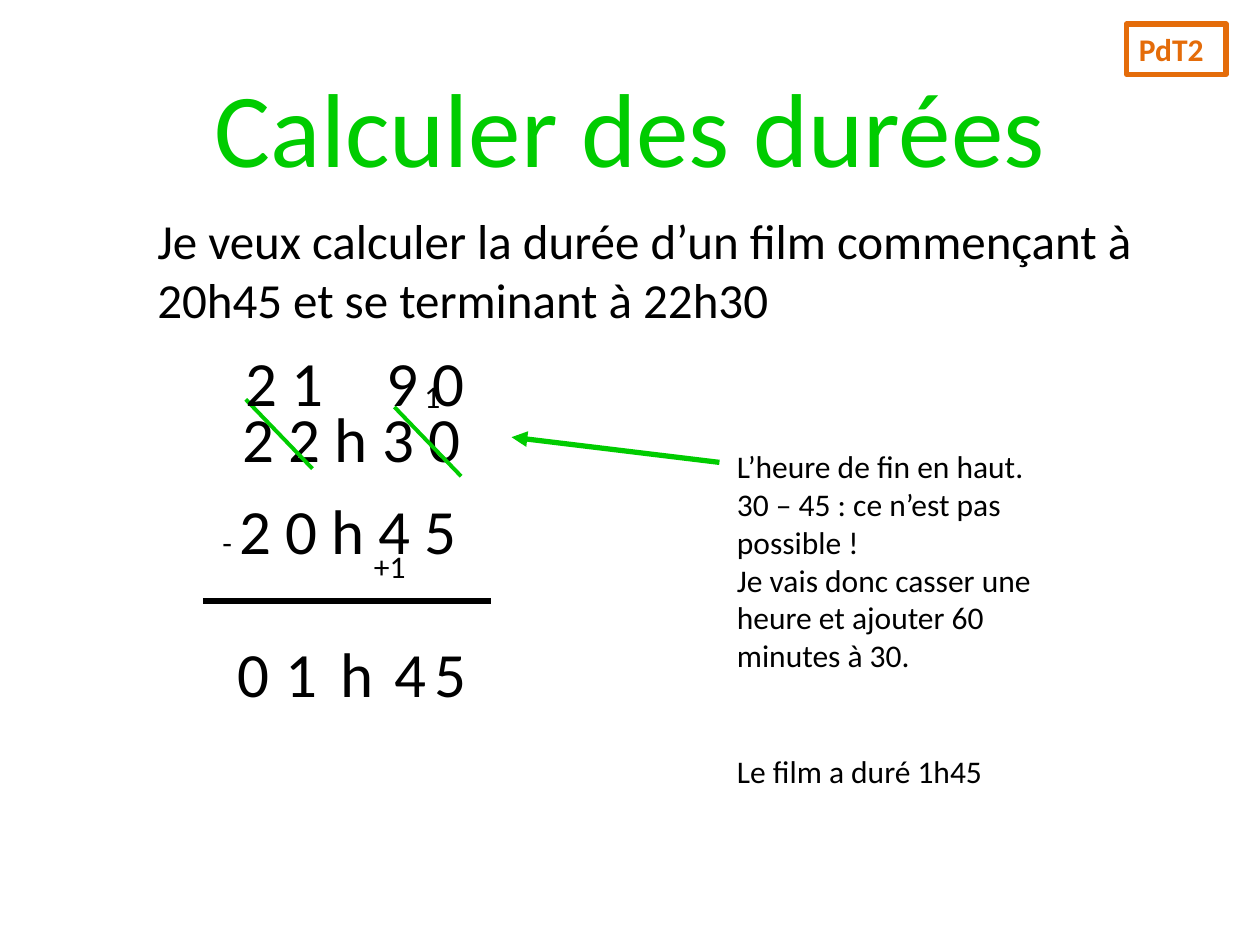
from dataclasses import dataclass

from lxml.etree import SubElement
from pptx import Presentation
from pptx.dml.color import RGBColor
from pptx.enum.shapes import MSO_CONNECTOR, MSO_SHAPE
from pptx.enum.text import MSO_ANCHOR, PP_ALIGN
from pptx.oxml.ns import qn
from pptx.util import Inches, Pt


@dataclass(frozen=True)
class Theme:
    font: str = "Calibri"
    ink: str = "000000"
    green: str = "00CC00"
    orange: str = "E46C0A"
    title: int = 60
    statement: int = 28
    digit: int = 36
    note: int = 18
    thick: float = 3
    thin: float = 2.25


class SlideBuilder:
    COLUMNS = 100
    ROWS = 75

    def __init__(self, presentation, theme):
        self.theme = theme
        self.column = presentation.slide_width / self.COLUMNS
        self.row = presentation.slide_height / self.ROWS
        self.slide = presentation.slides.add_slide(presentation.slide_layouts[6])

    def place(self, *lengths):
        units = (self.column, self.row) * 2
        return [round(length * unit) for length, unit in zip(lengths, units)]

    def format_run(self, run, size, color, bold=False):
        run.font.name = self.theme.font
        run.font.size = Pt(size)
        run.font.bold = bold
        run.font.color.rgb = RGBColor.from_string(color)

    def set_text(self, shape, text, size, color, bold=False):
        text_frame = shape.text_frame
        text_frame.word_wrap = True
        text_frame.text = text
        for paragraph in text_frame.paragraphs:
            paragraph.alignment = PP_ALIGN.LEFT
            for run in paragraph.runs:
                self.format_run(run, size, color, bold)
        return text_frame

    def text(self, text, area, size, color=None):
        shape = self.slide.shapes.add_textbox(*self.place(*area))
        return self.set_text(shape, text, size, color or self.theme.ink)

    def title(self, text, area):
        text_frame = self.text(text, area, self.theme.title, self.theme.green)
        text_frame.vertical_anchor = MSO_ANCHOR.MIDDLE
        text_frame.paragraphs[0].alignment = PP_ALIGN.CENTER

    def operand(self, prefix, digits, area):
        text_frame = self.text(prefix, area, self.theme.note)
        run = text_frame.paragraphs[0].add_run()
        run.text = digits
        self.format_run(run, self.theme.digit, self.theme.ink)

    def line(self, start, end, color, width, arrow=False):
        connector = self.slide.shapes.add_connector(
            MSO_CONNECTOR.STRAIGHT, *self.place(*start, *end))
        connector.line.color.rgb = RGBColor.from_string(color)
        connector.line.width = Pt(width)
        properties = connector._element.spPr
        if arrow:
            SubElement(properties.find(qn("a:ln")), qn("a:tailEnd"), type="triangle")
        SubElement(properties, qn("a:effectLst"))

    def badge(self, text, area):
        shape = self.slide.shapes.add_shape(MSO_SHAPE.RECTANGLE, *self.place(*area))
        shape.shadow.inherit = False
        shape.fill.background()
        shape.line.color.rgb = RGBColor.from_string(self.theme.orange)
        shape.line.width = Pt(self.theme.thick)
        text_frame = self.set_text(shape, text, self.theme.note, self.theme.orange, True)
        text_frame.vertical_anchor = MSO_ANCHOR.TOP


def main():
    presentation = Presentation()
    presentation.slide_width = Inches(10)
    presentation.slide_height = Inches(7.5)
    theme = Theme()
    builder = SlideBuilder(presentation, theme)

    builder.title("Calculer des durées", (5, 3, 90, 14))
    builder.text(
        "Je veux calculer la durée d’un film commençant à 20h45 et se terminant à 22h30",
        (11.5, 16.2, 82.7, 10.5), theme.statement)

    builder.operand(" ", "2 2 h 3 0", (17.7, 31.2, 22.8, 7.1))
    builder.operand(" - ", "2 0 h 4 5", (16.1, 38.5, 22.8, 7.1))
    builder.line((16.1, 47.7), (39, 47.7), theme.ink, theme.thick)
    builder.line((57.1, 36.7), (40.6, 34.7), theme.green, theme.thick, arrow=True)

    builder.text("Le film a duré 1h45", (57.5, 59.2, 29.9, 4), theme.note)
    builder.text(
        "L’heure de fin en haut.\n"
        "30 – 45 : ce n’est pas possible !\n"
        "Je vais donc casser une heure et ajouter 60 minutes à 30.",
        (57.5, 35, 29.9, 19.2), theme.note)

    for left, top in ((31.3, 32.3), (19.5, 31.7)):
        builder.line((left, top), (left + 5.3, top + 5.5), theme.green, theme.thin)
    for digits, left in (("2 1", 18.5), ("9 0", 29.7)):
        builder.text(digits, (left, 26.8, 9.5, 7.1), theme.digit)
    builder.text("1", (32.7, 29.4, 3.1, 4), theme.note)
    builder.text("+1", (28.7, 42.9, 5.3, 4), theme.note)

    for symbol, left in zip("01h45", (17.9, 21.7, 26, 30.3, 33.5)):
        builder.text(symbol, (left, 49.9, 3.1, 7.1), theme.digit)

    builder.badge("PdT2", (89.4, 1.9, 7.9, 4))
    presentation.save("out.pptx")


if __name__ == "__main__":
    main()
